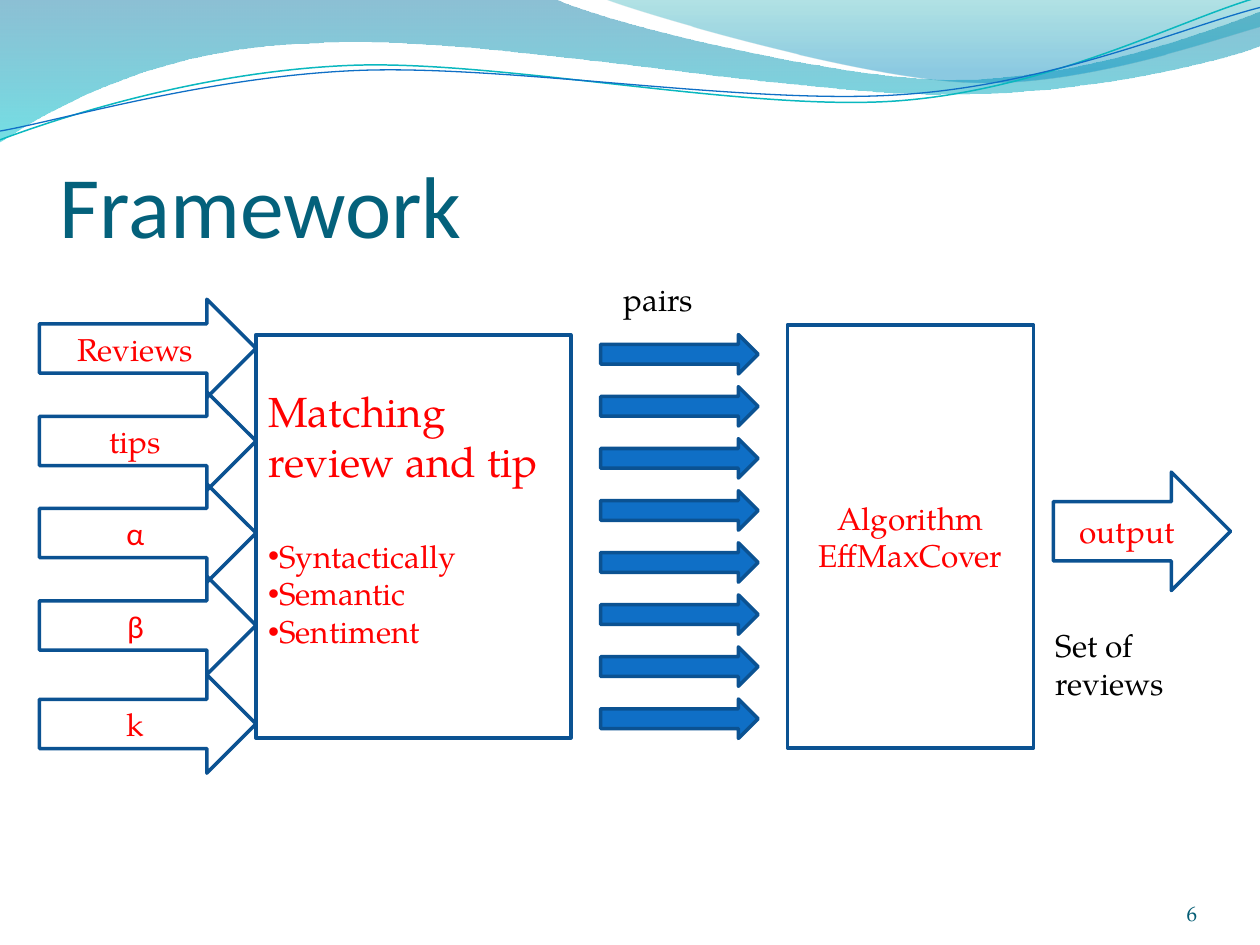
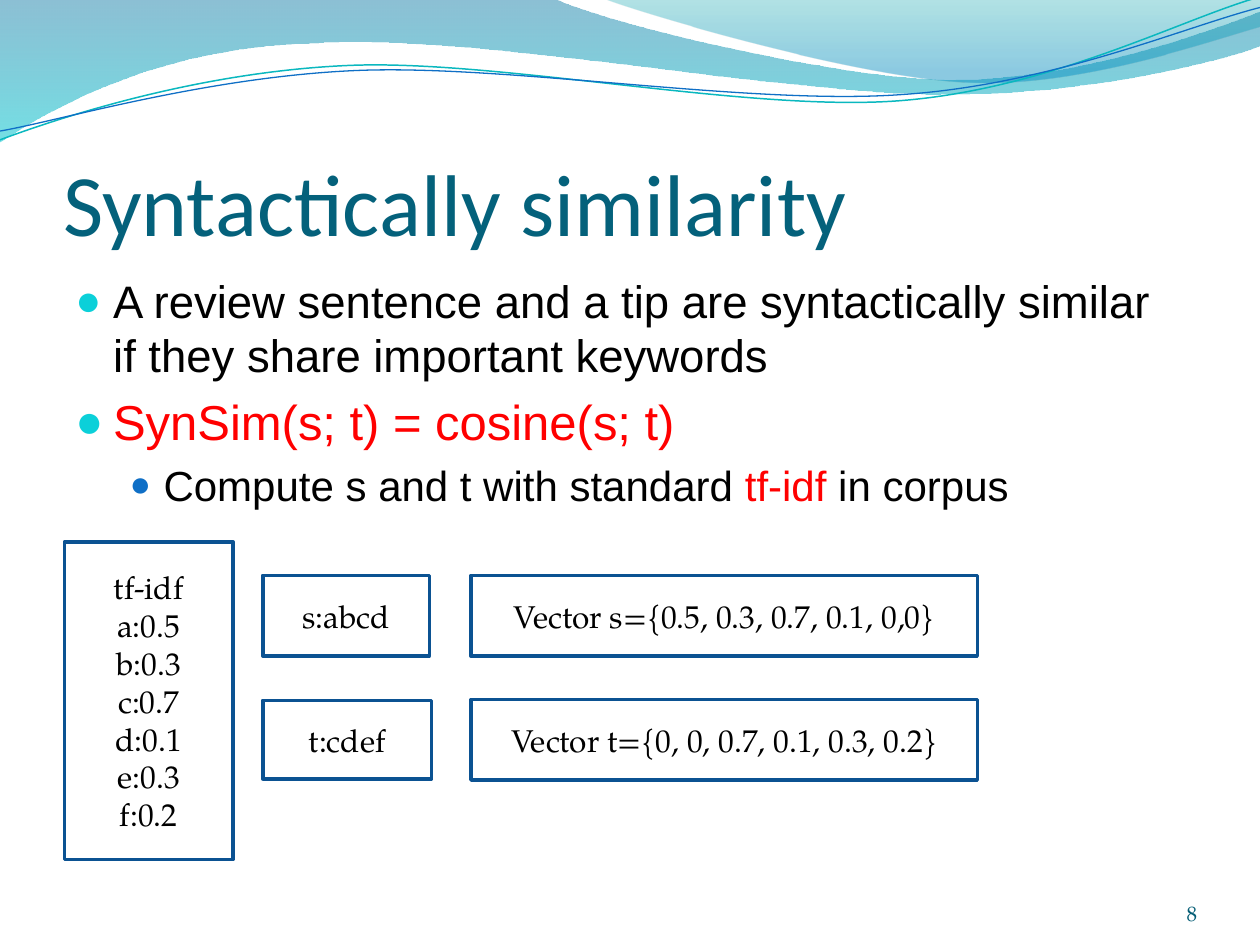
import math

import pptx
import pptx.util
import pptx.dml.color
import pptx.enum.shapes
import pptx.enum.text
import pptx.oxml.ns
from lxml import etree

Pt = pptx.util.Pt
RGBColor = pptx.dml.color.RGBColor
SHAPE = pptx.enum.shapes.MSO_SHAPE
ALIGN = pptx.enum.text.PP_ALIGN
ANCHOR = pptx.enum.text.MSO_ANCHOR
qn = pptx.oxml.ns.qn

BLACK = RGBColor(0x00, 0x00, 0x00)
RED = RGBColor(0xFF, 0x00, 0x00)
BLUE = RGBColor(0x0F, 0x6F, 0xC6)
DARK_BLUE = RGBColor(0x0B, 0x52, 0x92)
TEAL = RGBColor(0x0A, 0xB8, 0xBF)
CYAN = RGBColor(0x0B, 0xD0, 0xD9)
TITLE_COLOR = RGBColor(0x04, 0x61, 0x7B)
NUMBER_COLOR = RGBColor(0x04, 0x5D, 0x75)
SERIF, SANS, BODY = "TeX Gyre Pagella", "Calibri", "Arial"

# Header waves: a start, then segments of one point (line) or three (curve)
WAVE_BANDS = [
    ((0, 0),
     [[(316.8, -0.7)],
      [(342.7, 12.2), (478.1, 45.4), (545.8, 45.4)],
      [(614.2, 45.4), (689.8, 18.7), (720, 6.5)],
      [(720.7, 25.9)],
      [(707.8, 31.7), (626.4, 54.7), (537.1, 54)],
      [(447.8, 54), (275, 20.2), (185, 24.5)],
      [(92.9, 25.9), (33.1, 59.8), (-0.7, 81.4)],
      [(0, 0)]],
     [(0, RGBColor(0x00, 0x74, 0xA1), 45), (1, RGBColor(0x00, 0xC6, 0xCF), 55)]),
    ((344.9, -0.7),
     [[(366.5, 7.9), (491, 44.6), (553.7, 46.8)],
      [(616.3, 49.7), (691.9, 23), (720, 15.1)],
      [(720, 0)],
      [(344.9, -0.7)]],
     [(0, RGBColor(0x00, 0xA1, 0xA9), 30), (0.8, RGBColor(0x00, 0x8B, 0xBF), 45)]),
]
WAVE_LINES = [
    ((0, 79.9),
     [[(34.6, 67), (113.8, 41), (199.4, 37.4)],
      [(284.4, 33.8), (427, 64.1), (513.4, 57.6)],
      [(599.8, 51.1), (675.4, 10.8), (718.6, -1.4)]], TEAL, 0.85),
    ((0, 74.9),
     [[(33.8, 69.1), (118.1, 43.9), (203.8, 40.3)],
      [(290.2, 36.7), (429.8, 60.5), (516.2, 54)],
      [(601.9, 48.2), (677.5, 15.1), (720, 4.3)]], BLUE, 0.75),
]
LINE_TILT, LINE_CENTER = -2.7, (359.5, 42)

# Framework: inputs with their tops
INPUTS = [("Reviews", 171, SERIF), ("tips", 223.9, SERIF), ("α", 276.5, SANS),
          ("β", 329.3, SANS), ("k", 385.6, SERIF)]
PLAIN_BULLET = {"bullet": ("•", None, 100)}
MATCHING = [
    {"text": "Matching review and tip", "size": 24},
    {"text": "Syntactically", "before": 29, **PLAIN_BULLET},
    {"text": "Semantic", **PLAIN_BULLET},
    {"text": "Sentiment", **PLAIN_BULLET},
]
PAIR_COUNT, PAIR_TOP, PAIR_STEP = 8, 191.2, 29.75

# Similarity
MAIN_BULLET = {"bullet": ("●", CYAN, 95), "margin": 21.6, "hanging": 21.6}
SUB_BULLET = {"bullet": ("●", BLUE, 85), "margin": 50.4, "hanging": 19.4, "level": 1}
SIMILARITY = [
    {"text": "A review sentence and a tip are syntactically similar "
             "if they share important keywords", "size": 26, "before": 5.2, **MAIN_BULLET},
    {"text": "SynSim(s; t) = cosine(s; t)", "size": 28, "before": 5.6,
     "color": RED, **MAIN_BULLET},
    {"text": [("Compute s and t with standard ", BLACK), ("tf-idf", RED),
              (" in corpus", BLACK)], "size": 24, "before": 4.8, **SUB_BULLET},
]
WEIGHTS = ["tf-idf", "a:0.5", "b:0.3", "c:0.7", "d:0.1", "e:0.3", "f:0.2"]
EXAMPLE_BOXES = [
    (["s:abcd"], (150.2, 328.8, 95.2, 46.1)),
    (["t:cdef"], (150.2, 400.2, 96.5, 44.9)),
    (WEIGHTS, (36.8, 309.7, 96.5, 181.4)),
    (["Vector s={0.5, 0.3, 0.7, 0.1, 0,0}"], (269.1, 328.8, 289.4, 46.1)),
    (["Vector t={0, 0, 0.7, 0.1, 0.3, 0.2}"], (269.1, 399.7, 289.4, 46.1)),
]


def add_bullet(paragraph, character, color, percent):
    properties = paragraph._p.get_or_add_pPr()
    if color is not None:
        bullet_color = etree.SubElement(properties, qn("a:buClr"))
        etree.SubElement(bullet_color, qn("a:srgbClr"), val=str(color))
    etree.SubElement(properties, qn("a:buSzPct"), val=str(percent * 1000))
    etree.SubElement(properties, qn("a:buFont"), typeface=BODY)
    etree.SubElement(properties, qn("a:buChar"), char=character)


def write_text(shape, lines, size=18, color=BLACK, font=SERIF, align=ALIGN.LEFT,
               anchor=ANCHOR.TOP, insets=(7.2, 3.6, 7.2, 3.6)):
    """Write lines (strings or dicts with their own format) into a shape."""
    frame = shape.text_frame
    frame.word_wrap = True
    frame.vertical_anchor = anchor
    (frame.margin_left, frame.margin_top,
     frame.margin_right, frame.margin_bottom) = map(Pt, insets)
    for index, line in enumerate(lines):
        line = {"text": line} if isinstance(line, str) else line
        paragraph = frame.add_paragraph() if index else frame.paragraphs[0]
        paragraph.alignment = align
        paragraph.level = line.get("level", 0)
        paragraph.space_before = Pt(line.get("before", 0))
        if "bullet" in line:
            properties = paragraph._p.get_or_add_pPr()
            properties.set("marL", str(Pt(line.get("margin", 0))))
            properties.set("indent", str(-Pt(line.get("hanging", 0))))
            add_bullet(paragraph, *line["bullet"])
        runs = line["text"]
        if isinstance(runs, str):
            runs = [(runs, line.get("color", color))]
        for text, run_color in runs:
            run = paragraph.add_run()
            run.text = text
            run.font.name = font
            run.font.size = Pt(line.get("size", size))
            run.font.color.rgb = run_color


def add_text(slide, lines, box, **text_format):
    write_text(slide.shapes.add_textbox(*map(Pt, box)), lines, **text_format)


def add_outlined(parent, kind, box, lines=(), fill=None, **text_format):
    """Add an outlined shape to a slide or a group."""
    shape = parent.shapes.add_shape(kind, *map(Pt, box))
    shape.shadow.inherit = False
    if fill is None:
        shape.fill.background()
    else:
        shape.fill.solid()
        shape.fill.fore_color.rgb = fill
    shape.line.color.rgb = DARK_BLUE
    shape.line.width = Pt(2)
    if lines:
        text_format = {"align": ALIGN.CENTER, "anchor": ANCHOR.MIDDLE, **text_format}
        write_text(shape, lines, **text_format)


def untilt(point):
    """Turn a point back about the line centre, before the tilt is applied."""
    angle = math.radians(-LINE_TILT)
    dx, dy = (value - center for value, center in zip(point, LINE_CENTER))
    return (LINE_CENTER[0] + dx * math.cos(angle) - dy * math.sin(angle),
            LINE_CENTER[1] + dx * math.sin(angle) + dy * math.cos(angle))


def add_wave(slide, start, segments, close):
    """Lay out all points as lines, then merge each three into a curve."""
    points = [(Pt(x), Pt(y)) for x, y in [start, *sum(segments, [])]]
    builder = slide.shapes.build_freeform(*points[0])
    builder.add_line_segments(points[1:], close=close)
    shape = builder.convert_to_shape()
    shape.shadow.inherit = False
    steps = iter(list(shape._element.iter(qn("a:lnTo"))))
    for segment in segments:
        parts = [next(steps) for _ in segment]
        if len(parts) == 3:
            curve = etree.Element(qn("a:cubicBezTo"))
            parts[0].addprevious(curve)
            for part in parts:
                curve.append(part[0])
                part.getparent().remove(part)
    return shape


def add_waves_to_master(presentation, slide):
    """Draw the header waves once and keep them on the slide master."""
    waves = []
    for start, segments, stops in WAVE_BANDS:
        band = add_wave(slide, start, segments, True)
        band.line.fill.background()
        band.fill.gradient()
        band.fill.gradient_angle = 270
        for stop, (position, color, _) in zip(band.fill.gradient_stops, stops):
            stop.position = position
            stop.color.rgb = color
        for element, (_, _, opacity) in zip(band._element.iter(qn("a:srgbClr")), stops):
            etree.SubElement(element, qn("a:alpha"), val=str(opacity * 1000))
        waves.append(band)
    lines = []
    for start, segments, color, width in WAVE_LINES:
        line = add_wave(slide, untilt(start),
                        [[untilt(point) for point in segment] for segment in segments], False)
        line.rotation = LINE_TILT
        line.fill.background()
        line.line.color.rgb = color
        line.line.width = Pt(width)
        lines.append(line)
    waves.append(slide.shapes.add_group_shape(lines))
    master_tree = presentation.slide_master.shapes._spTree
    for wave in waves:
        master_tree.append(wave._element)
    for number, properties in enumerate(master_tree.iter(qn("p:cNvPr")), start=1):
        properties.set("id", str(number))


def add_base_slide(presentation, title, title_position, number):
    slide = presentation.slides.add_slide(presentation.slide_layouts[6])
    add_text(slide, [title], (*title_position, 648, 90), size=50, color=TITLE_COLOR,
             font=SANS, anchor=ANCHOR.BOTTOM, insets=(0, 3.6, 0, 0))
    add_text(slide, [number], (624, 500.4, 60, 28.8), size=12, color=NUMBER_COLOR,
             align=ALIGN.RIGHT, anchor=ANCHOR.BOTTOM, insets=(0, 0, 0, 0))
    return slide


def build_framework(presentation):
    slide = add_base_slide(presentation, "Framework", (34, 56), "6")
    # Inputs and matching step
    for name, top, font in INPUTS:
        add_outlined(slide, SHAPE.RIGHT_ARROW, (22.5, top, 123.8, 56.2), [name],
                     color=RED, font=font)
    add_outlined(slide, SHAPE.RECTANGLE, (146.2, 191.3, 180, 230.4), MATCHING,
                 color=RED, align=ALIGN.LEFT, insets=(7.2, 3.6, 7.2, 25))
    # Pairs
    pairs = slide.shapes.add_group_shape()
    for index in range(PAIR_COUNT):
        add_outlined(pairs, SHAPE.RIGHT_ARROW,
                     (343.2, PAIR_TOP + index * PAIR_STEP, 90, 22.5), fill=BLUE)
    add_text(slide, ["pairs"], (349.2, 156.4, 56.2, 28.8))
    # Algorithm and its output
    add_outlined(slide, SHAPE.RECTANGLE, (450, 185.6, 140.6, 241.9),
                 ["Algorithm", "EffMaxCover"], color=RED)
    add_outlined(slide, SHAPE.RIGHT_ARROW, (601.9, 269.8, 101.3, 67.7), ["output"], color=RED)
    add_text(slide, ["Set of reviews"], (596.1, 354.2, 123.8, 28.8))
    return slide


def build_similarity(presentation):
    slide = add_base_slide(presentation, "Syntactically similarity", (36.1, 55.2), "8")
    add_text(slide, SIMILARITY, (36, 152.4, 648, 345.6), font=BODY)
    # Worked example
    for lines, box in EXAMPLE_BOXES:
        add_outlined(slide, SHAPE.RECTANGLE, box, lines)


def main():
    presentation = pptx.Presentation()
    presentation.slide_width = Pt(720)
    presentation.slide_height = Pt(540)
    framework = build_framework(presentation)
    add_waves_to_master(presentation, framework)
    build_similarity(presentation)
    presentation.save("out.pptx")


if __name__ == "__main__":
    main()
